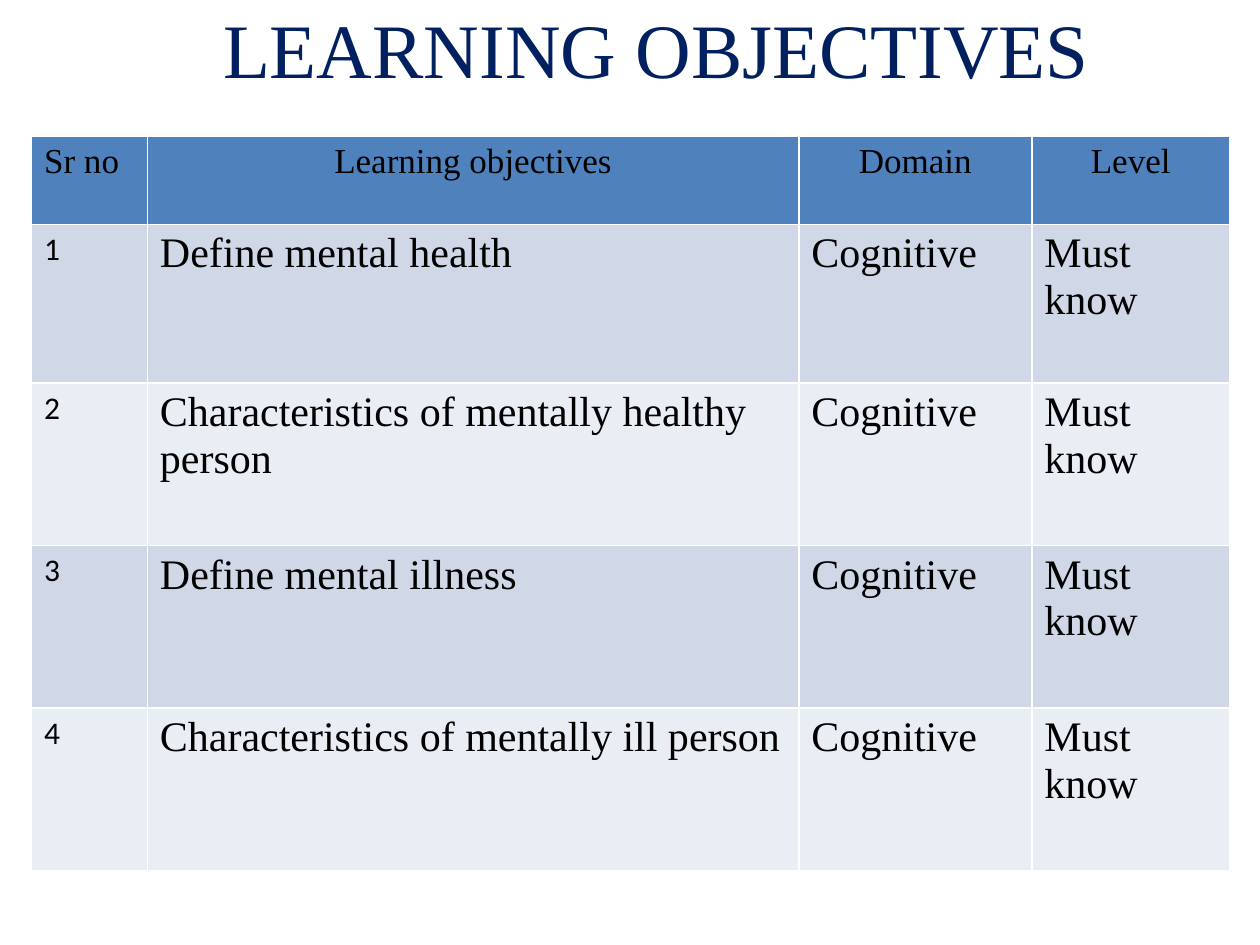
"""Build a learning objectives slide with a title and a table."""
from dataclasses import dataclass

from lxml import etree
from pptx import Presentation
from pptx.dml.color import RGBColor
from pptx.enum.text import MSO_ANCHOR, PP_ALIGN
from pptx.oxml.ns import qn
from pptx.slide import Slide
from pptx.table import _Cell
from pptx.text.text import _Paragraph
from pptx.util import Inches, Pt

LEFT, CENTER = PP_ALIGN.LEFT, PP_ALIGN.CENTER
MIDDLE = MSO_ANCHOR.MIDDLE
BLANK_LAYOUT = 6


@dataclass(frozen=True)
class Theme:
    serif: str = "Times New Roman"
    sans: str = "Calibri"
    title: str = "002060"
    ink: str = "000000"
    border: str = "FFFFFF"
    header: str = "4F81BD"
    bands: tuple[str, str] = ("D0D8E8", "E9EDF4")
    title_size: int = 44
    header_size: int = 20
    number_size: int = 18
    body_size: int = 24
    border_width: int = 1


@dataclass(frozen=True)
class TextStyle:
    font: str
    size: int
    color: str
    align: PP_ALIGN = LEFT


@dataclass(frozen=True)
class Objective:
    text: str
    domain: str = "Cognitive"
    level: str = "Must know"


THEME = Theme()
HEADINGS = ("Sr no", "Learning objectives", "Domain", "Level")
OBJECTIVES = (
    Objective("Define mental health"),
    Objective("Characteristics of mentally healthy person"),
    Objective("Define mental illness"),
    Objective("Characteristics of mentally ill person"),
)
COLUMN_WIDTHS = (0.92, 5.17, 1.85, 1.57)
ROW_HEIGHTS = (0.7, 1.26, 1.29, 1.29, 1.29)


def write(para: _Paragraph, text: str, style: TextStyle) -> None:
    para.text = text
    para.alignment = style.align
    for span in para.runs:
        span.font.name = style.font
        span.font.size = Pt(style.size)
        span.font.bold = False
        span.font.color.rgb = RGBColor.from_string(style.color)


def draw_borders(cell: _Cell) -> None:
    properties = cell._tc.get_or_add_tcPr()
    for side in ("a:lnL", "a:lnR", "a:lnT", "a:lnB"):
        line = etree.SubElement(properties, qn(side), w=str(Pt(THEME.border_width)))
        fill = etree.SubElement(line, qn("a:solidFill"))
        etree.SubElement(fill, qn("a:srgbClr"), val=THEME.border)


def fill_cell(cell: _Cell, text: str, style: TextStyle, color: str) -> None:
    draw_borders(cell)
    cell.fill.solid()
    cell.fill.fore_color.rgb = RGBColor.from_string(color)
    write(cell.text_frame.paragraphs[0], text, style)


def add_title(page: Slide, text: str) -> None:
    box = page.shapes.add_textbox(Inches(0.5), Inches(-0.25), Inches(9), Inches(1.25))
    frame = box.text_frame
    frame.word_wrap = True
    frame.vertical_anchor = MIDDLE
    frame.margin_left = Inches(0.52)
    style = TextStyle(THEME.serif, THEME.title_size, THEME.title, CENTER)
    write(frame.paragraphs[0], text, style)


def add_objectives(page: Slide) -> None:
    frame = page.shapes.add_table(
        len(ROW_HEIGHTS), len(COLUMN_WIDTHS), Inches(0.25), Inches(1.08),
        Inches(sum(COLUMN_WIDTHS)), Inches(sum(ROW_HEIGHTS)))
    table = frame.table
    for column, width in zip(table.columns, COLUMN_WIDTHS):
        column.width = Inches(width)
    for row, height in zip(table.rows, ROW_HEIGHTS):
        row.height = Inches(height)

    for index, heading in enumerate(HEADINGS):
        align = CENTER if index else LEFT
        style = TextStyle(THEME.serif, THEME.header_size, THEME.ink, align)
        fill_cell(table.cell(0, index), heading, style, THEME.header)

    number = TextStyle(THEME.sans, THEME.number_size, THEME.ink)
    body = TextStyle(THEME.serif, THEME.body_size, THEME.ink)
    for row, item in enumerate(OBJECTIVES, start=1):
        band = THEME.bands[(row - 1) % 2]
        values = (str(row), item.text, item.domain, item.level)
        for index, value in enumerate(values):
            style = body if index else number
            fill_cell(table.cell(row, index), value, style, band)


def main() -> None:
    deck = Presentation()
    deck.slide_width, deck.slide_height = Inches(10), Inches(7.5)
    page = deck.slides.add_slide(deck.slide_layouts[BLANK_LAYOUT])
    add_title(page, "LEARNING OBJECTIVES")
    add_objectives(page)
    deck.save("out.pptx")


if __name__ == "__main__":
    main()
